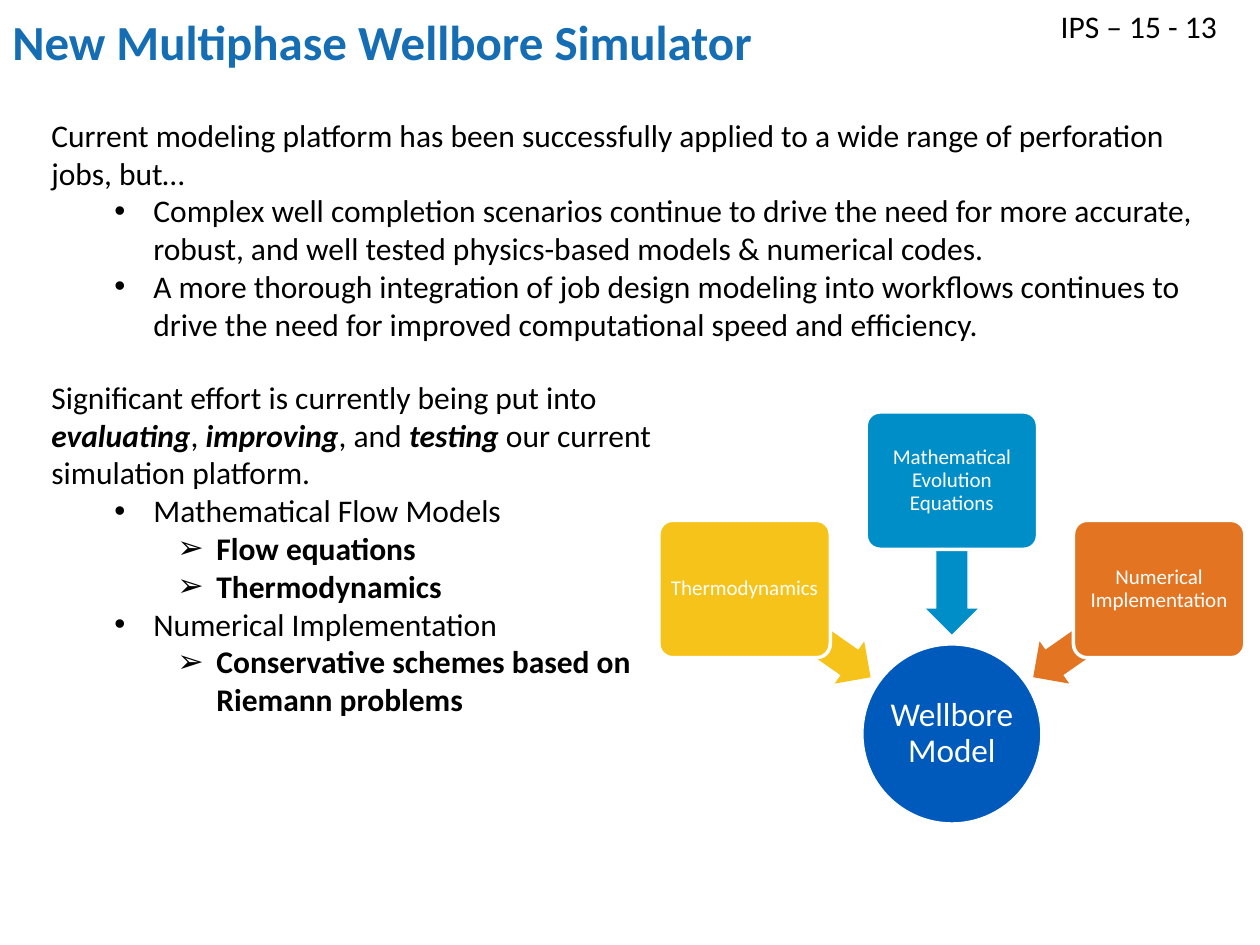
from lxml import etree
from pptx import Presentation
from pptx.dml.color import RGBColor
from pptx.enum.shapes import MSO_SHAPE
from pptx.enum.text import MSO_ANCHOR, PP_ALIGN
from pptx.oxml.ns import qn
from pptx.util import Inches, Pt

OVAL, ROUND, ARROW = MSO_SHAPE.OVAL, MSO_SHAPE.ROUNDED_RECTANGLE, MSO_SHAPE.LEFT_ARROW
TOP, MID = MSO_ANCHOR.TOP, MSO_ANCHOR.MIDDLE
LEFT, MIDDLE = PP_ALIGN.LEFT, PP_ALIGN.CENTER
HUE = {"title": "156DB3", "text": "000000", "white": "FFFFFF", "core": "005ABB",
       "gold": "F6C31A", "sky": "008EC8", "rust": "E37422"}
MARKS = {1: "•", 2: "➢"}

deck = Presentation()
deck.slide_width, deck.slide_height = Inches(10), Inches(7.5)
slide = deck.slides.add_slide(deck.slide_layouts[6])
shapes = slide.shapes


def area(x, y, w, h):
    wide, high = deck.slide_width / 100, deck.slide_height / 100
    return round(x * wide), round(y * high), round(w * wide), round(h * high)


def write(shape, rows, size=18, hue="text", bold=False, align=LEFT, anchor=TOP,
          inset=None, space=None):
    frame = shape.text_frame
    frame.word_wrap = True
    frame.vertical_anchor = anchor
    if inset is not None:
        frame.margin_left = frame.margin_right = Inches(inset)
        frame.margin_top = frame.margin_bottom = Inches(inset)
    for n, (level, text) in enumerate(rows):
        para = frame.add_paragraph() if n else frame.paragraphs[0]
        para.alignment, para.level = align, level
        if space:
            para.line_spacing = space
        if level:
            props = para._p.get_or_add_pPr()
            props.set("marL", str(Inches(0.31 + level / 2)))
            props.set("indent", str(Inches(-0.31)))
            etree.SubElement(props, qn("a:buFont")).set("typeface", "Arial")
            etree.SubElement(props, qn("a:buChar")).set("char", MARKS[level])
        for k, part in enumerate(text.split("*")):
            run = para.add_run()
            run.text = part
            font = run.font
            font.name, font.size = "Calibri", Pt(size)
            font.bold = bold or level == 2 or k % 2 == 1
            font.italic = k % 2 == 1
            font.color.rgb = RGBColor.from_string(HUE[hue])


title = shapes.add_textbox(*area(0, 0, 90, 8.67))
write(title, [(0, "New Multiphase Wellbore Simulator")], size=28, hue="title",
      bold=True, anchor=MID)

parts = [
    (OVAL, (68.4, 68.13, 14.3, 19.07), 0, "core", "Wellbore Model", 19),
]
names = [
    ("Thermodynamics", "gold", 55.07, 64.27, 215),
    ("Mathematical Evolution Equations", "sky", 43.6, 56.27, 270),
    ("Numerical Implementation", "rust", 55.07, 64.27, 325),
]
for n, (name, hue, top, tip, turn) in enumerate(names):
    parts.append((ARROW, (58 + 11.45 * n, tip, 12.2, 5.47), turn, hue, "", 12))
    parts.append((ROUND, (52.3 + 16.45 * n, top, 13.6, 14.53), 0, hue, name, 12))

for kind, spot, turn, hue, name, size in parts:
    shape = shapes.add_shape(kind, *area(*spot))
    shape.shadow.inherit = False
    shape.rotation = turn
    shape.fill.solid()
    shape.fill.fore_color.rgb = RGBColor.from_string(HUE[hue])
    if kind == ARROW:
        shape.adjustments[0], shape.adjustments[1] = 0.6, 0.5
        shape.line.fill.background()
        continue
    if kind == ROUND:
        shape.adjustments[0] = 0.1
    shape.line.color.rgb = RGBColor.from_string(HUE["white"])
    shape.line.width = Pt(2)
    write(shape, [(0, name)], size=size, hue="white", align=MIDDLE, anchor=MID,
          inset=0.01 if kind == OVAL else 0.03, space=0.9)

intro = shapes.add_textbox(*area(3.1, 11.6, 92.6, 25.6))
write(intro, [
    (0, "Current modeling platform has been successfully applied to a wide range of "
        "perforation jobs, but…"),
    (1, "Complex well completion scenarios continue to drive the need for more accurate, "
        "robust, and well tested physics-based models & numerical codes."),
    (1, "A more thorough integration of job design modeling into workflows continues to "
        "drive the need for improved computational speed and efficiency."),
])

effort = shapes.add_textbox(*area(3.1, 39.33, 51.6, 41.73))
write(effort, [
    (0, "Significant effort is currently being put into *evaluating*, *improving*, and "
        "*testing* our current simulation platform."),
    (1, "Mathematical Flow Models"),
    (2, "Flow equations"),
    (2, "Thermodynamics"),
    (1, "Numerical Implementation"),
    (2, "Conservative schemes based on Riemann problems"),
])

tag = shapes.add_textbox(*area(83.2, 0.13, 16.8, 5.33))
write(tag, [(0, "IPS – 15 - 13")])

deck.save("out.pptx")
